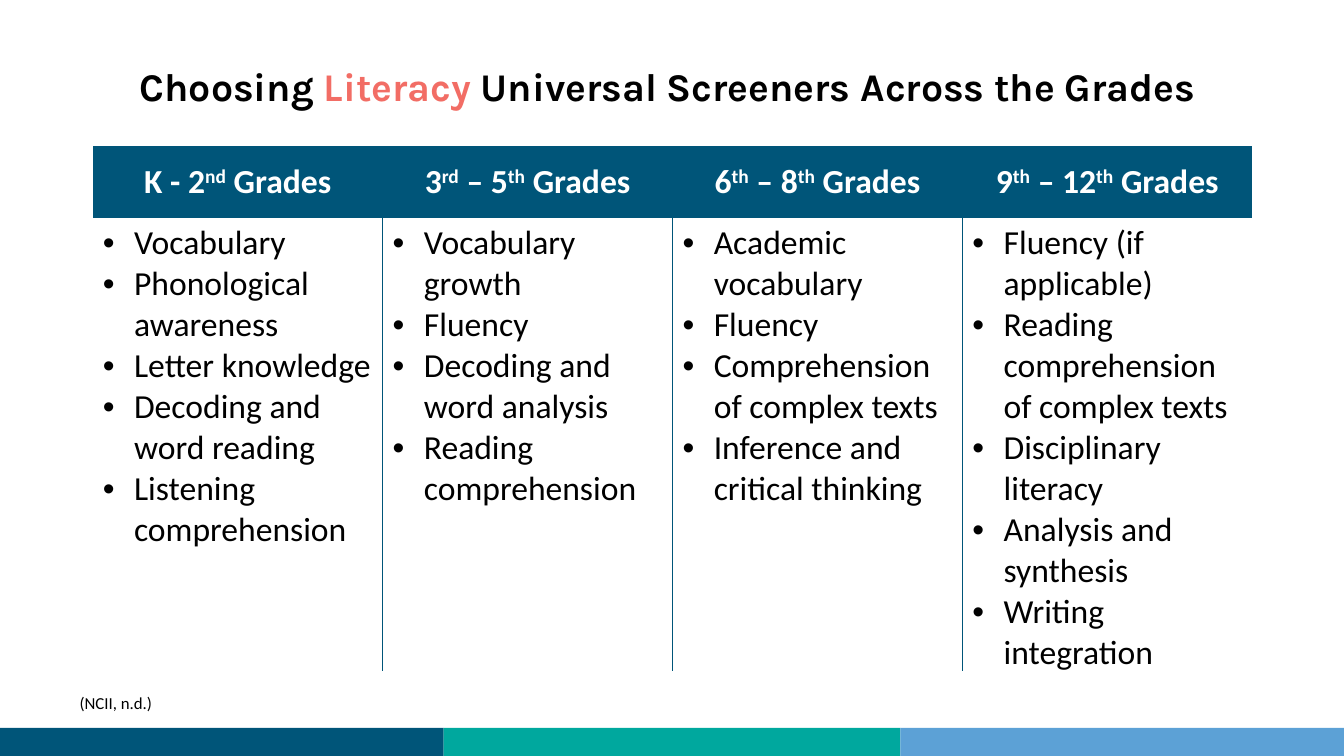
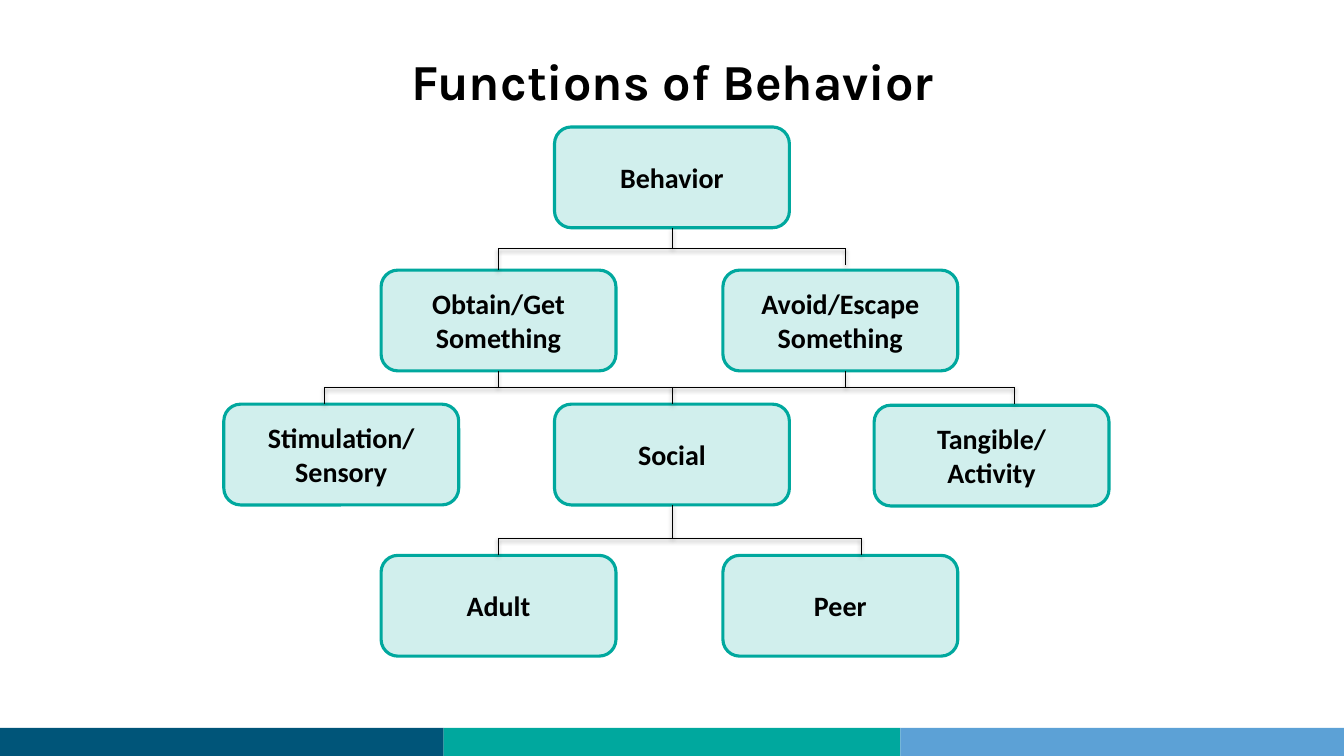
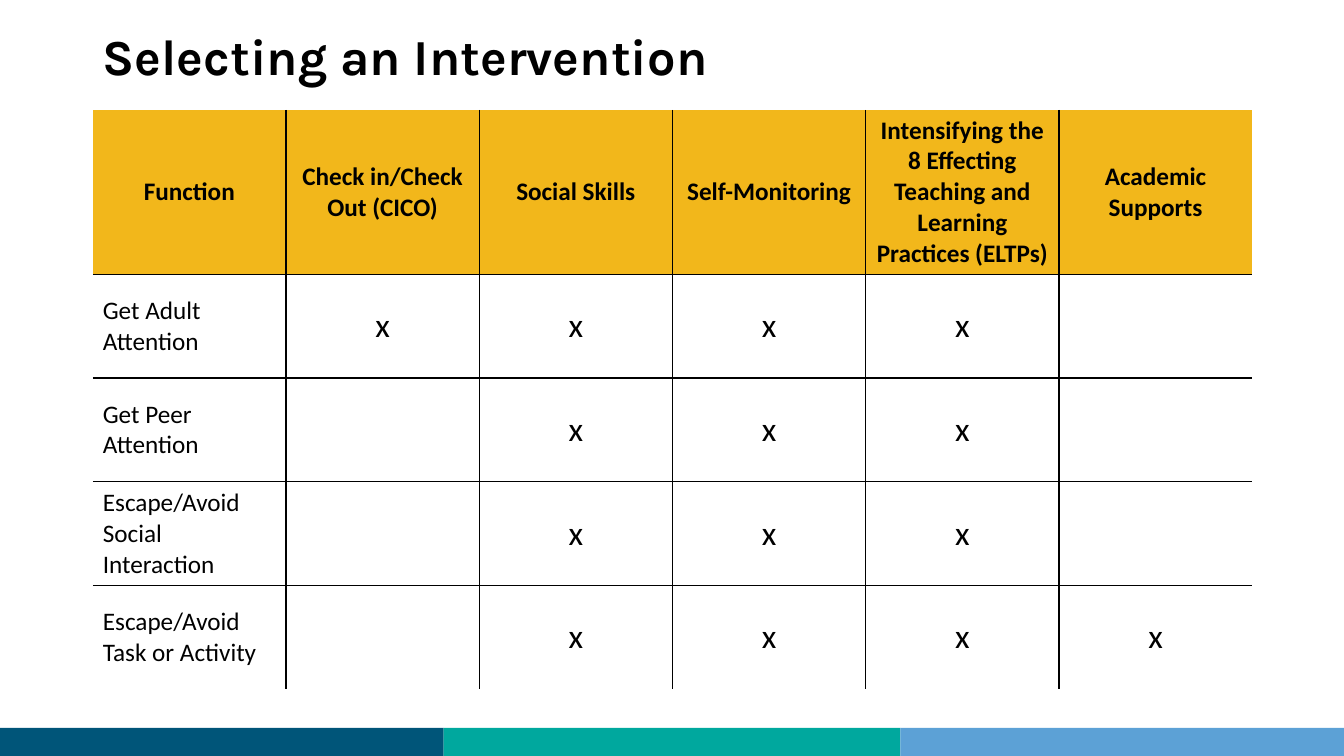
from lxml import etree
from pptx import Presentation
from pptx.dml.color import RGBColor
from pptx.enum import shapes, text
from pptx.oxml.ns import qn
from pptx.util import Inches, Pt

COLORS = {
    "navy": "005579", "teal": "00A89E", "sky": "5CA1D6", "coral": "F26D65",
    "gold": "F2B71B", "black": "000000", "white": "FFFFFF",
}
BODY_FONT, TITLE_FONT = "Calibri", "Karla"
CENTER, LEFT = text.PP_ALIGN.CENTER, text.PP_ALIGN.LEFT
MIDDLE, TOP = text.MSO_ANCHOR.MIDDLE, text.MSO_ANCHOR.TOP


def add_run(paragraph, words, size, color="black", bold=False, font=BODY_FONT):
    run = paragraph.add_run()
    run.text = words
    run.font.name = font
    run.font.size = Pt(size)
    run.font.bold = bold
    run.font.color.rgb = RGBColor.from_string(COLORS[color])
    return run


def style_cell(cell, anchor, fill, border, sides):
    """Fill a cell and draw only the named sides (L, R, T, B)."""
    cell.vertical_anchor = anchor
    if fill:
        cell.fill.solid()
        cell.fill.fore_color.rgb = RGBColor.from_string(COLORS[fill])
    else:
        cell.fill.background()
    properties = cell._tc.get_or_add_tcPr()
    for position, side in enumerate("LRTB"):
        line = etree.Element(qn("a:ln" + side), w=str(Pt(1)))
        if side in sides:
            solid = etree.SubElement(line, qn("a:solidFill"))
            etree.SubElement(solid, qn("a:srgbClr"), val=COLORS[border])
        else:
            etree.SubElement(line, qn("a:noFill"))
        properties.insert(position, line)


presentation = Presentation()
presentation.slide_width = Inches(13.33)
presentation.slide_height = Inches(7.5)

# Shared parts: bottom bands and titles
BANDS = [(0, 4.4, "navy"), (4.4, 4.53, "teal"), (8.93, 4.4, "sky")]
TITLES = [
    # top, height, side inset, size, alignment, runs
    (0.4, 0.9, 0, 28, CENTER, [("Choosing ", "black"), ("Literacy ", "coral"),
                               ("Universal Screeners Across the Grades ", "black")]),
    (0.4, 0.79, 0.1, 36, CENTER, [("Functions of Behavior", "black")]),
    (0.15, 0.8, 0.1, 36, LEFT, [("Selecting an Intervention", "black")]),
]
slides = []
for top, height, inset, size, alignment, runs in TITLES:
    slide = presentation.slides.add_slide(presentation.slide_layouts[6])
    slides.append(slide)
    for left, width, color in BANDS:
        band = slide.shapes.add_shape(shapes.MSO_SHAPE.RECTANGLE, Inches(left),
                                      Inches(7.22), Inches(width), Inches(0.28))
        band.shadow.inherit = False
        band.fill.solid()
        band.fill.fore_color.rgb = RGBColor.from_string(COLORS[color])
        band.line.fill.background()
    title = slide.shapes.add_textbox(Inches(0.92), Inches(top), Inches(11.5), Inches(height))
    frame = title.text_frame
    frame.word_wrap = True
    frame.vertical_anchor = MIDDLE
    frame.margin_left = frame.margin_right = Inches(inset)
    frame.margin_top = frame.margin_bottom = Inches(inset / 2)
    frame.paragraphs[0].alignment = alignment
    for words, color in runs:
        add_run(frame.paragraphs[0], words, size, color, True, TITLE_FONT)
screener_slide, behavior_slide, intervention_slide = slides

# Slide 1: screeners by grade band; ^ marks the edges of a superscript
GRADES = [
    ("K - 2^nd^ Grades", ["Vocabulary", "Phonological awareness", "Letter knowledge",
                          "Decoding and word reading", "Listening comprehension"]),
    ("3^rd^ – 5^th^ Grades", ["Vocabulary growth", "Fluency", "Decoding and word analysis",
                              "Reading comprehension"]),
    ("6^th^ – 8^th^ Grades", ["Academic vocabulary", "Fluency",
                              "Comprehension of complex texts",
                              "Inference and critical thinking"]),
    ("9^th^ – 12^th^ Grades", ["Fluency (if applicable)",
                               "Reading comprehension of complex texts",
                               "Disciplinary literacy", "Analysis and synthesis",
                               "Writing integration"]),
]
table = screener_slide.shapes.add_table(2, len(GRADES), Inches(0.92), Inches(1.45),
                                        Inches(11.5), Inches(5.21)).table
table.first_row = table.horz_banding = False
table.rows[0].height = Inches(0.71)
table.rows[1].height = Inches(4.5)
for column, (heading, skills) in enumerate(GRADES):
    sides = ("L" if column else "") + ("R" if column < len(GRADES) - 1 else "")
    header, body = table.cell(0, column), table.cell(1, column)
    style_cell(header, MIDDLE, "navy", "navy", sides)
    style_cell(body, TOP, None, "navy", sides)
    paragraph = header.text_frame.paragraphs[0]
    paragraph.alignment = CENTER
    for index, words in enumerate(heading.split("^")):
        run = add_run(paragraph, words, 24, "white", True)
        if index % 2:
            run.font._element.set("baseline", "30000")
    for index, skill in enumerate(skills):
        frame = body.text_frame
        paragraph = frame.add_paragraph() if index else frame.paragraphs[0]
        properties = paragraph._p.get_or_add_pPr()
        properties.set("marL", str(Inches(0.31)))
        properties.set("indent", str(-Inches(0.31)))
        etree.SubElement(properties, qn("a:buFont"), typeface="Arial")
        etree.SubElement(properties, qn("a:buChar"), char="•")
        add_run(paragraph, skill, 24)

# Source note
note = screener_slide.shapes.add_textbox(Inches(0.66), Inches(6.8), Inches(11.76), Inches(0.34))
frame = note.text_frame
frame.word_wrap = True
frame.margin_left = frame.margin_right = Inches(0.13)
frame.margin_top = frame.margin_bottom = Inches(0.07)
add_run(frame.paragraphs[0], "(NCII, n.d.)", 12)

# Slide 2: tree of behavior functions
BOXES = [
    (5.5, 1.26, ["Behavior"]),
    (3.78, 2.68, ["Obtain/Get", "Something"]),
    (7.17, 2.68, ["Avoid/Escape Something"]),
    (2.22, 4.01, ["Stimulation/", "Sensory"]),
    (5.5, 4.01, ["Social"]),
    (8.67, 4.02, ["Tangible/", "Activity"]),
    (3.78, 5.51, ["Adult"]),
    (7.17, 5.51, ["Peer"]),
]
for left, top, lines in BOXES:
    box = behavior_slide.shapes.add_shape(shapes.MSO_SHAPE.ROUNDED_RECTANGLE, Inches(left),
                                          Inches(top), Inches(2.33), Inches(1))
    box.shadow.inherit = False
    box.fill.solid()
    box.fill.fore_color.rgb = RGBColor.from_string(COLORS["teal"])
    fill_color = box._element.spPr.find(qn("a:solidFill"))[0]
    etree.SubElement(fill_color, qn("a:alpha"), val="18000")
    box.line.color.rgb = RGBColor.from_string(COLORS["teal"])
    box.line.width = Pt(2.25)
    frame = box.text_frame
    frame.word_wrap = True
    frame.vertical_anchor = MIDDLE
    for index, words in enumerate(lines):
        paragraph = frame.add_paragraph() if index else frame.paragraphs[0]
        paragraph.alignment = CENTER
        add_run(paragraph, words, 20, bold=True)

# Each branch: stem x, stem top, bar y, bar left, bar right, drops (x, bottom)
BRANCHES = [
    (6.67, 2.26, 2.47, 4.94, 8.39, [(4.94, 2.68), (8.39, 2.63)]),
    (4.94, 3.68, 3.84, 3.22, 6.67, [(3.22, 4.01), (6.67, 4.01)]),
    (8.39, 3.68, 3.84, 6.67, 10.06, [(10.06, 4.01)]),
    (6.67, 5.01, 5.34, 4.94, 8.54, [(4.94, 5.51), (8.54, 5.51)]),
]
for stem, stem_top, bar, bar_left, bar_right, drops in BRANCHES:
    segments = [(stem, stem_top, stem, bar), (bar_left, bar, bar_right, bar)]
    segments += [(x, bar, x, bottom) for x, bottom in drops]
    for segment in segments:
        connector = behavior_slide.shapes.add_connector(
            shapes.MSO_CONNECTOR.STRAIGHT, *[Inches(value) for value in segment])
        connector.line.color.rgb = RGBColor.from_string(COLORS["black"])
        connector.line.width = Pt(0.75)
        effects = etree.SubElement(connector._element.spPr, qn("a:effectLst"))
        shadow = etree.SubElement(effects, qn("a:outerShdw"), blurRad=str(Pt(3.1)),
                                  dist=str(Pt(1.6)), dir="5400000", rotWithShape="0")
        shadow_color = etree.SubElement(shadow, qn("a:srgbClr"), val=COLORS["black"])
        etree.SubElement(shadow_color, qn("a:alpha"), val="38000")

# Slide 3: interventions by function
INTERVENTIONS = [
    ["Function", "Check in/Check Out (CICO)", "Social Skills", "Self-Monitoring",
     "Intensifying the 8 Effecting Teaching and Learning Practices (ELTPs)",
     "Academic Supports"],
    ["Get Adult Attention", "x", "x", "x", "x", ""],
    ["Get Peer Attention", "", "x", "x", "x", ""],
    ["Escape/Avoid Social Interaction", "", "x", "x", "x", ""],
    ["Escape/Avoid Task or Activity", "", "x", "x", "x", "x"],
]
last_row, last_column = len(INTERVENTIONS) - 1, len(INTERVENTIONS[0]) - 1
table = intervention_slide.shapes.add_table(last_row + 1, last_column + 1, Inches(0.92),
                                            Inches(1.09), Inches(11.5), Inches(5.75)).table
table.first_row = table.horz_banding = False
for row, entries in enumerate(INTERVENTIONS):
    table.rows[row].height = Inches(1.03 if row else 1.63)
    for column, words in enumerate(entries):
        cell = table.cell(row, column)
        sides = (("L" if column else "") + ("R" if column < last_column else "")
                 + ("T" if row else "") + ("B" if row < last_row else ""))
        style_cell(cell, MIDDLE, None if row else "gold", "black", sides)
        if words:
            paragraph = cell.text_frame.paragraphs[0]
            paragraph.alignment = LEFT if row and not column else CENTER
            add_run(paragraph, words, 24 if words == "x" else 18, bold=row == 0)

presentation.save("out.pptx")
